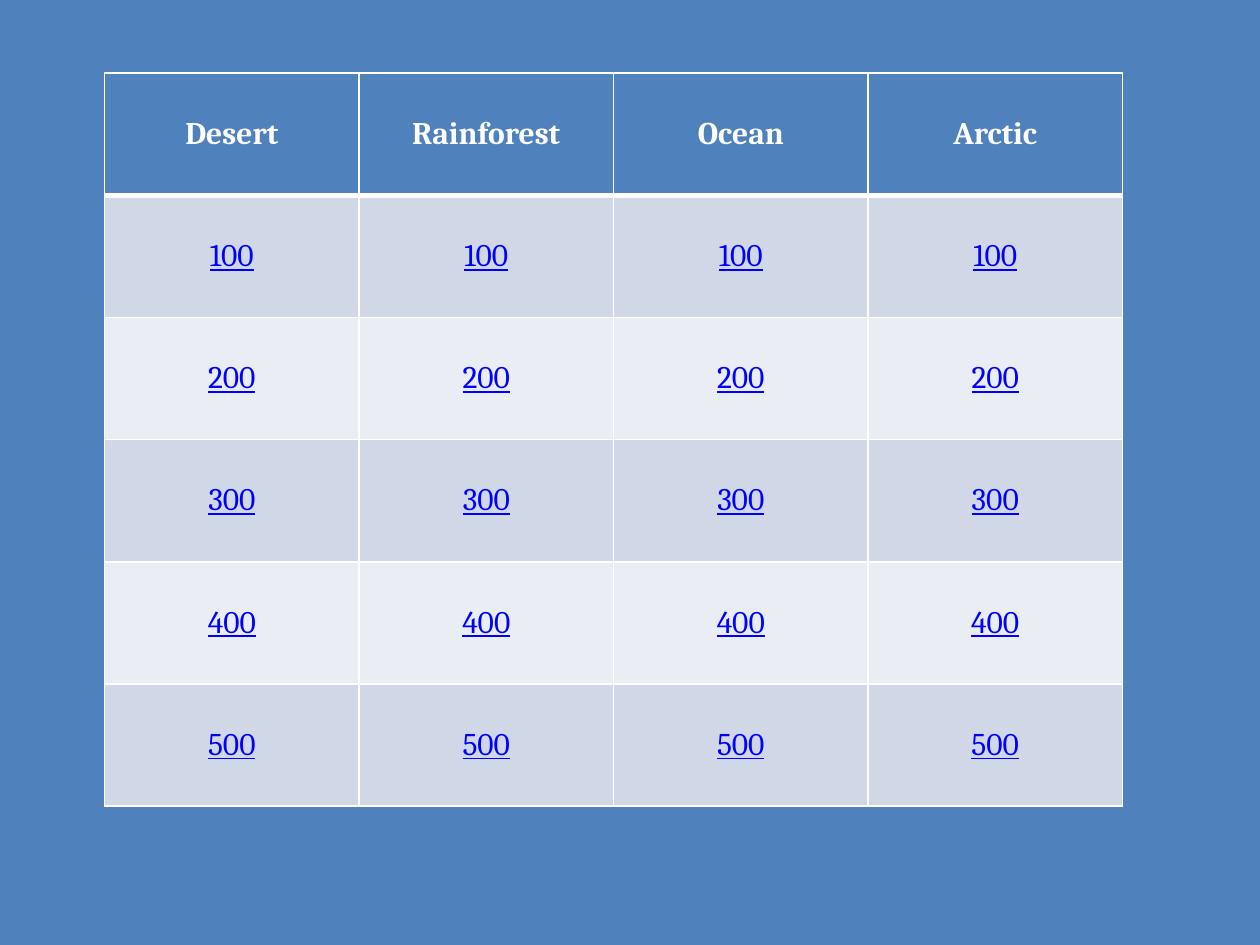
from lxml import etree
from pptx import Presentation
from pptx.dml.color import RGBColor
from pptx.enum.text import MSO_ANCHOR, PP_ALIGN
from pptx.oxml.ns import qn
from pptx.util import Inches, Pt

CENTER = PP_ALIGN.CENTER
MIDDLE = MSO_ANCHOR.MIDDLE

BLUE = RGBColor(0x4F, 0x81, 0xBD)
DARK_BAND = RGBColor(0xD0, 0xD8, 0xE8)
LIGHT_BAND = RGBColor(0xE9, 0xED, 0xF4)
WHITE = RGBColor(0xFF, 0xFF, 0xFF)
LINK_BLUE = RGBColor(0x00, 0x00, 0xFF)

CATEGORIES = ["Desert", "Rainforest", "Ocean", "Arctic"]
POINTS = [100, 200, 300, 400, 500]

LEFT, TOP = 0.83, 0.58
COL_WIDTH, ROW_HEIGHT = 2.02, 0.97


def set_borders(cell, color, **widths):
    """Draw the cell's L, R, T and B borders, widths in points."""
    tcPr = cell._tc.get_or_add_tcPr()
    for i, side in enumerate("LRTB"):
        ln = etree.Element(qn(f"a:ln{side}"), w=str(Pt(widths.get(side, 1))))
        fill = etree.SubElement(ln, qn("a:solidFill"))
        etree.SubElement(fill, qn("a:srgbClr"), val=str(color))
        tcPr.insert(i, ln)


def write_cell(cell, text, fill, color, bold=False, underline=False):
    cell.fill.solid()
    cell.fill.fore_color.rgb = fill
    cell.vertical_anchor = MIDDLE
    p = cell.text_frame.paragraphs[0]
    p.alignment = CENTER
    r = p.add_run()
    r.text = text
    r.font.name = "Cambria"
    r.font.size = Pt(18)
    r.font.bold = bold
    r.font.underline = underline
    r.font.color.rgb = color


def main():
    prs = Presentation()
    prs.slide_width, prs.slide_height = Inches(10), Inches(7.5)
    s = prs.slides.add_slide(prs.slide_layouts[6])
    s.background.fill.solid()
    s.background.fill.fore_color.rgb = BLUE

    n_rows, n_cols = len(POINTS) + 1, len(CATEGORIES)
    board = s.shapes.add_table(
        n_rows, n_cols, Inches(LEFT), Inches(TOP),
        Inches(COL_WIDTH * n_cols), Inches(ROW_HEIGHT * n_rows)).table
    for col in board.columns:
        col.width = Inches(COL_WIDTH)
    for row in board.rows:
        row.height = Inches(ROW_HEIGHT)

    for c, category in enumerate(CATEGORIES):
        header = board.cell(0, c)
        write_cell(header, category, BLUE, WHITE, bold=True)
        set_borders(header, WHITE, B=3)
        for r, points in enumerate(POINTS, start=1):
            cell = board.cell(r, c)
            band = DARK_BAND if r % 2 else LIGHT_BAND
            write_cell(cell, str(points), band, LINK_BLUE, underline=True)
            set_borders(cell, WHITE, T=3 if r == 1 else 1)

    prs.save("out.pptx")


if __name__ == "__main__":
    main()
